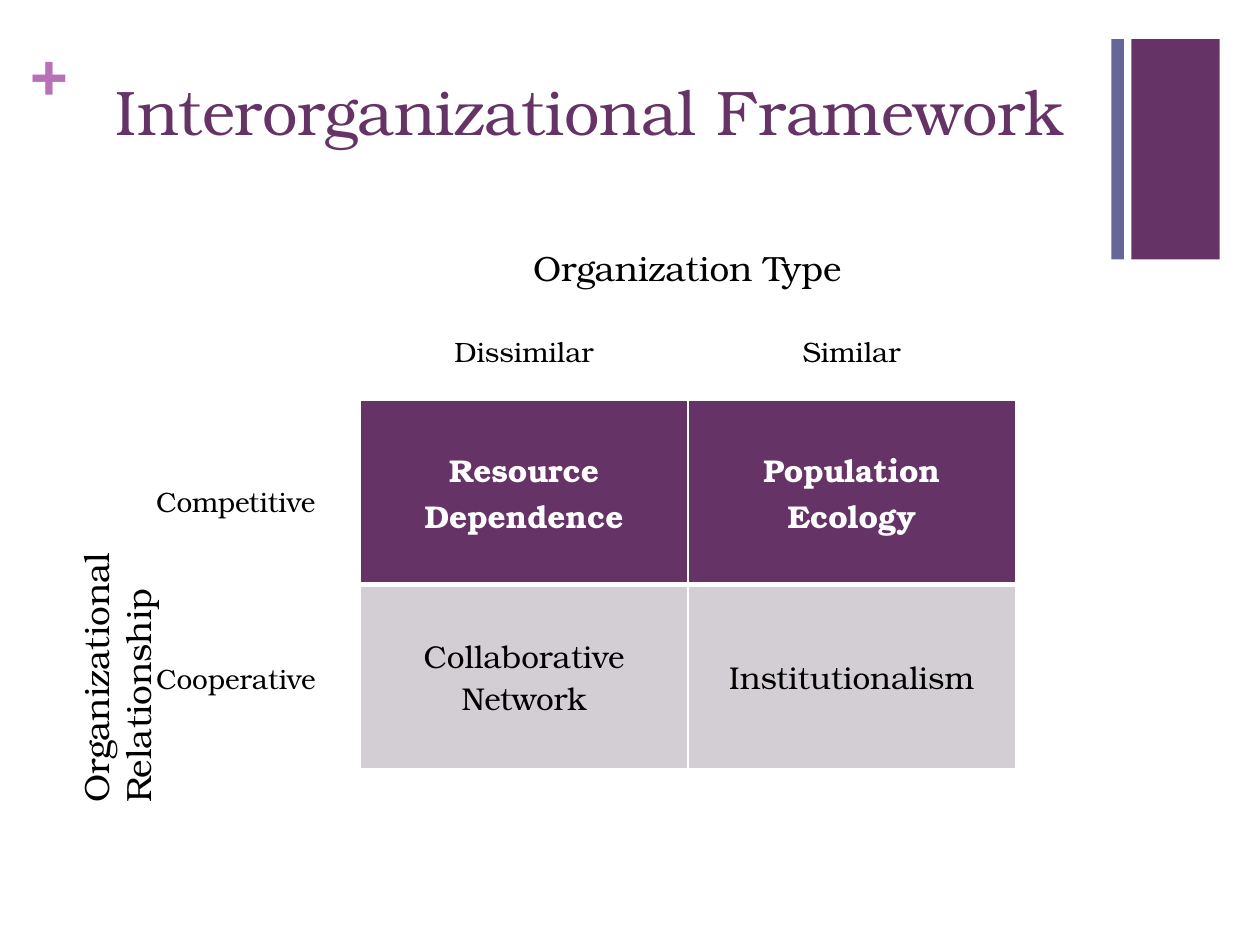
from lxml.etree import SubElement
from pptx import Presentation
from pptx.dml.color import RGBColor
from pptx.enum.shapes import MSO_SHAPE
from pptx.enum.text import MSO_ANCHOR, PP_ALIGN
from pptx.oxml.ns import qn
from pptx.util import Inches, Pt

PLUM = RGBColor(0x66, 0x33, 0x66)
SLATE = RGBColor(0x66, 0x66, 0x99)
ORCHID = RGBColor(0xB8, 0x70, 0xB8)
MIST = RGBColor(0xD3, 0xCE, 0xD3)
WHITE = RGBColor(0xFF, 0xFF, 0xFF)
BLACK = RGBColor(0, 0, 0)
FONT = "TeX Gyre Bonum"

# Matrix grid, in inches
LEFT, TOP = 2.86, 3.18
COLUMN, ROW = 2.6, 1.46

presentation = Presentation()
presentation.slide_width, presentation.slide_height = Inches(10), Inches(7.5)
slide = presentation.slides.add_slide(presentation.slide_layouts[6])


def style(frame, size, color, align=PP_ALIGN.LEFT, bold=False):
    paragraph = frame.paragraphs[0]
    paragraph.alignment = align
    font = paragraph.runs[0].font
    font.name, font.size, font.bold = FONT, Pt(size), bold
    font.color.rgb = color


def add_label(text, left, top, width, height, size, color=BLACK,
              align=PP_ALIGN.LEFT, bold=False):
    label = slide.shapes.add_textbox(
        Inches(left), Inches(top), Inches(width), Inches(height))
    label.text_frame.word_wrap = True
    label.text_frame.text = text
    style(label.text_frame, size, color, align, bold)
    return label


# Corner bars
for left, width, color in ((8.98, 0.7, PLUM), (8.82, 0.1, SLATE)):
    bar = slide.shapes.add_shape(
        MSO_SHAPE.RECTANGLE, Inches(left), Inches(0.31), Inches(width), Inches(1.75))
    bar.shadow.inherit = False
    bar.fill.solid()
    bar.fill.fore_color.rgb = color
    bar.line.fill.background()

# Plus sign and title
plus = add_label("+", 0.24, 0.25, 0.29, 0.61, 36, ORCHID, bold=True).text_frame
plus.margin_left = plus.margin_top = plus.margin_right = plus.margin_bottom = 0
add_label("Interorganizational Framework", 0.55, 0.53, 8.26, 1.22, 36, PLUM,
          PP_ALIGN.CENTER)

# Two-by-two matrix
theories = (("Resource Dependence", "Population Ecology"),
            ("Collaborative Network", "Institutionalism"))
row_looks = ((PLUM, WHITE, True), (MIST, BLACK, False))
row_borders = ({"lnL": 1, "lnR": 1, "lnT": 1, "lnB": 3},
               {"lnL": 1, "lnR": 1, "lnT": 3, "lnB": 1})
matrix = slide.shapes.add_table(
    2, 2, Inches(LEFT), Inches(TOP), Inches(2 * COLUMN), Inches(2 * ROW)).table
for r, (fill, color, bold) in enumerate(row_looks):
    for c, theory in enumerate(theories[r]):
        cell = matrix.cell(r, c)
        cell.text_frame.text = theory
        cell.vertical_anchor = MSO_ANCHOR.MIDDLE
        style(cell.text_frame, 18, color, PP_ALIGN.CENTER, bold)
        # Borders come before the fill in the cell properties
        properties = cell._tc.get_or_add_tcPr()
        for edge, width in row_borders[r].items():
            border = SubElement(properties, qn("a:" + edge), w=str(Pt(width)))
            border_fill = SubElement(border, qn("a:solidFill"))
            SubElement(border_fill, qn("a:srgbClr"), val=str(WHITE))
        cell.fill.solid()
        cell.fill.fore_color.rgb = fill

# Axis titles
add_label("Organization Type", 3.92, 1.91, 3.07, 0.44, 20, align=PP_ALIGN.CENTER)
relationship = add_label("Organizational Relationship", -1.11, 4.38, 3.74, 0.44, 20)
relationship.rotation = 270

# Column and row headings
for c, kind in enumerate(("Dissimilar", "Similar")):
    add_label(kind, LEFT + c * COLUMN, 2.61, COLUMN, 0.37, 16, align=PP_ALIGN.CENTER)
for r, relation in enumerate(("Competitive", "Cooperative")):
    add_label(relation, 1.14, 3.8 + r * 1.4, 1.63, 0.37, 16)

presentation.save("out.pptx")
